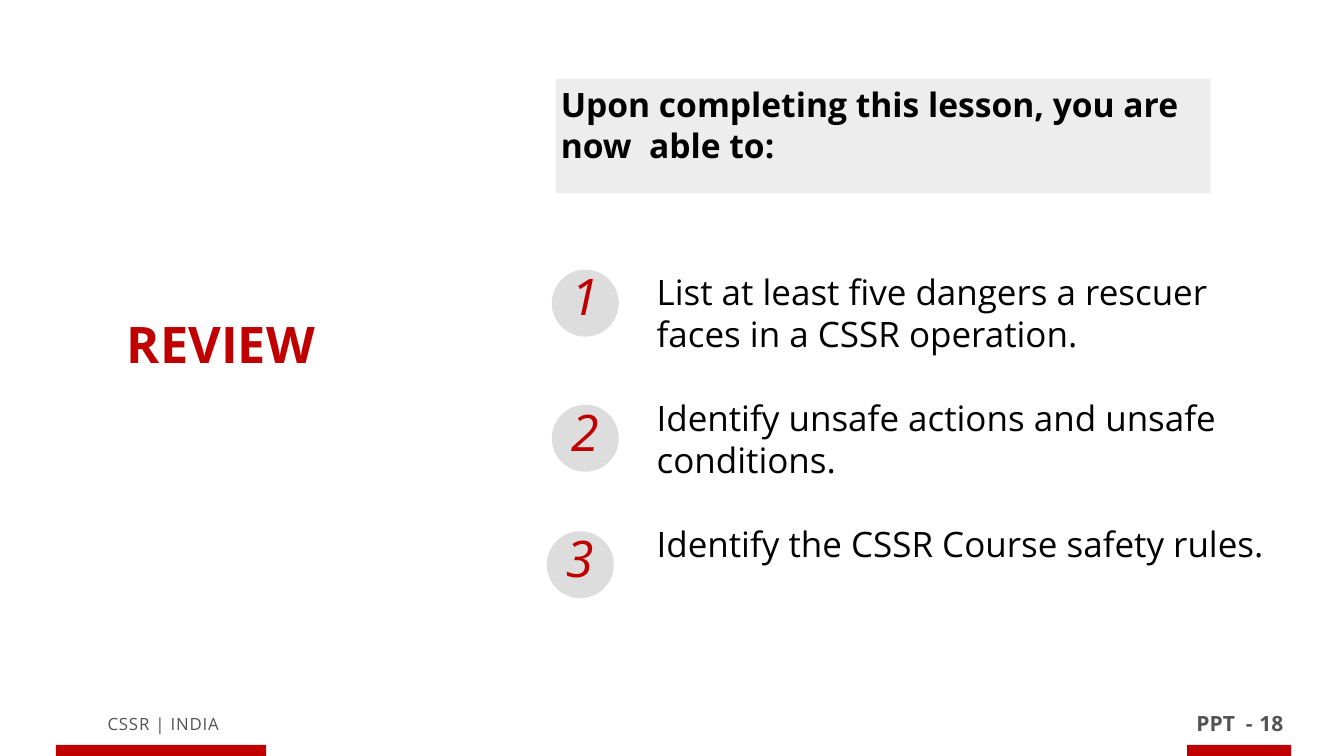
from pptx import Presentation
from pptx.dml.color import RGBColor
from pptx.enum.shapes import MSO_SHAPE as SHAPE
from pptx.enum.text import MSO_ANCHOR as ANCHOR, MSO_AUTO_SIZE as FIT, PP_ALIGN as ALIGN
from pptx.util import Inches, Pt

W, H = 26.67, 15
FONT = "Open Sans"
RED, GREY, BLACK, PALE, DISC = "C00000", "535353", "000000", "EDEDED", "DDDDDD"
TITLE = "REVIEW"
LEAD = "Upon completing this lesson, you are now  able to:"
GOALS = [
    ["List at least five dangers a rescuer", "faces in a CSSR operation."],
    ["Identify unsafe actions and unsafe conditions."],
    ["Identify the CSSR Course safety rules."],
]
DISCS = [(10.95, 5.35), (10.95, 8.03), (10.85, 10.54)]
DISC_SIZE = 1.33
FOOTERS = [
    ("CSSR | INDIA", (0.7, 14.08, 5.08, 0.58), 24, False, 120),
    ("PPT  -", (23.4, 14.01, 1.8, 0.68), 30, True, 0),
    ("18", (24.83, 14.01, 0.8, 0.68), 30, True, 0),
]
BAR_H = 0.22
BARS = [(1.11, 4.17), (23.56, 2.06)]


def rgb(value):
    """Turn a hex string into a colour."""
    return RGBColor.from_string(value)


def place(s, box):
    """Move and size a shape in inches."""
    s.left, s.top, s.width, s.height = map(Inches, box)


def block(shapes, kind, box, fill):
    """Add a flat filled shape."""
    s = shapes.add_shape(kind, *map(Inches, box))
    s.shadow.inherit = False
    s.fill.solid()
    s.fill.fore_color.rgb = rgb(fill)
    s.line.fill.background()
    return s


def write(s, paragraphs, size, color, bold=False, italic=False,
          align=ALIGN.LEFT, gap=0, spacing=0, inset=0.09):
    """Fill a shape with paragraphs, each a list of lines."""
    tf = s.text_frame
    tf.word_wrap = True
    tf.auto_size = FIT.NONE
    tf.vertical_anchor = ANCHOR.TOP
    tf.margin_left = tf.margin_right = tf.margin_top = tf.margin_bottom = Inches(inset)
    for i, lines in enumerate(paragraphs):
        p = tf.add_paragraph() if i else tf.paragraphs[0]
        p.alignment = align
        p.space_before = Pt(gap if i else 0)
        p.font.size = Pt(size)
        for j, line in enumerate(lines):
            if j:
                p.add_line_break()
            r = p.add_run()
            r.text = line
            r.font.name, r.font.size = FONT, Pt(size)
            r.font.bold, r.font.italic = bold, italic
            r.font.color.rgb = rgb(color)
            if spacing:
                r.font._element.set("spc", str(spacing))


def textbox(shapes, box, paragraphs, size, color, **style):
    """Add a text box and write into it."""
    write(shapes.add_textbox(*map(Inches, box)), paragraphs, size, color, **style)


def main():
    """Build the review slide."""
    prs = Presentation()
    prs.slide_width, prs.slide_height = Inches(W), Inches(H)
    slide = prs.slides.add_slide(prs.slide_layouts[5])
    shapes = slide.shapes

    for text, box, size, bold, spacing in FOOTERS:
        textbox(shapes, box, [[text]], size, GREY, bold=bold, align=ALIGN.CENTER, spacing=spacing)
    for left, width in BARS:
        block(shapes, SHAPE.RECTANGLE, (left, H - BAR_H, width, BAR_H), RED)

    place(shapes.title, (2.43, 6.12, 5, 1.38))
    write(shapes.title, [[TITLE]], 72, RED, bold=True)

    lead = block(shapes, SHAPE.RECTANGLE, (11.03, 1.57, 12.99, 2.26), PALE)
    write(lead, [[LEAD]], 48, BLACK, bold=True, inset=0.1)

    for number, (left, top) in enumerate(DISCS, 1):
        group = shapes.add_group_shape().shapes
        block(group, SHAPE.OVAL, (left, top, DISC_SIZE, DISC_SIZE), DISC)
        textbox(group, (left + 0.29, top - 0.17, 0.9, 1.84), [[str(number)]], 72, RED, italic=True)

    textbox(shapes, (12.94, 5.28, 12.99, 6.78), GOALS, 50, BLACK, gap=60)
    prs.save("out.pptx")


if __name__ == "__main__":
    main()
